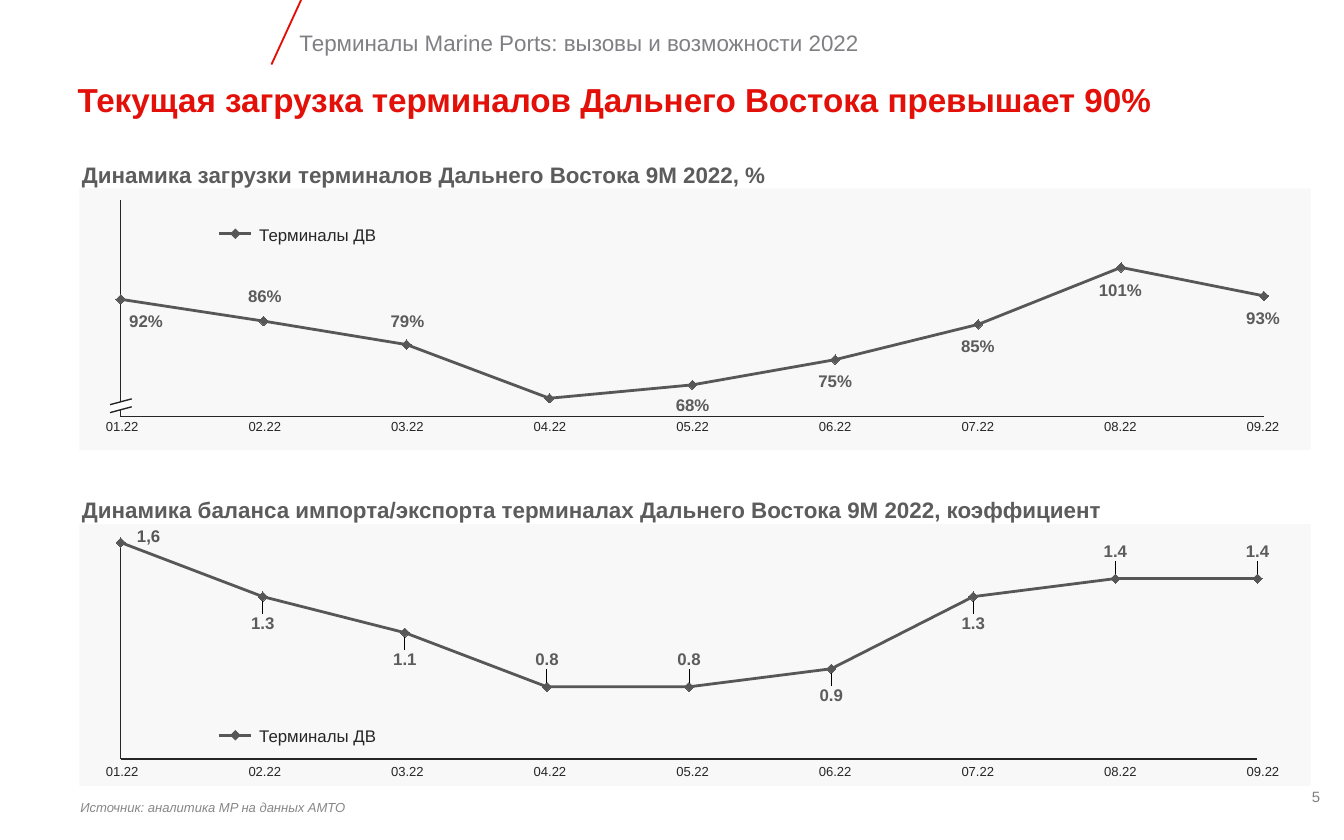
import pptx
import pptx.util
import pptx.chart.data
import pptx.dml.color
import pptx.enum.chart
import pptx.enum.shapes
import pptx.enum.text
import pptx.oxml
import pptx.oxml.ns

Cm = pptx.util.Cm
Pt = pptx.util.Pt
qn = pptx.oxml.ns.qn
Align = pptx.enum.text.PP_ALIGN
Anchor = pptx.enum.text.MSO_ANCHOR
Position = pptx.enum.chart.XL_LABEL_POSITION
COLORS = {"red": "E31009", "header": "807F83", "label": "5C5C5C", "series": "575757",
          "axis": "262626", "source": "878787", "white": "FFFFFF"}
MONTHS = [f"{month:02}.22" for month in range(1, 10)]
FIRST_X, MONTH_STEP = 2.31, 21.56 / 8
LEADER_LINES = (
    '<c:extLst xmlns:c="http://schemas.openxmlformats.org/drawingml/2006/chart">'
    '<c:ext uri="{CE6537A1-D6FC-4f65-9D91-7224C49458BB}" '
    'xmlns:c15="http://schemas.microsoft.com/office/drawing/2012/chart">'
    '<c15:showLeaderLines val="1"/></c:ext></c:extLst>')


class SlideBuilder:
    def __init__(self, slide, font="Arial"):
        self.slide = slide
        self.font = font

    def color(self, name):
        return pptx.dml.color.RGBColor.from_string(COLORS[name])

    def style_line(self, line, color, width):
        line.color.rgb = self.color(color)
        line.width = Pt(width)

    def text(self, box, words, size, color, bold=False, italic=False, align=Align.LEFT,
             anchor=Anchor.TOP, margins=(0.25, 0.13), wrap=True):
        shape = self.slide.shapes.add_textbox(*map(Cm, box))
        frame = shape.text_frame
        frame.word_wrap = wrap
        frame.vertical_anchor = anchor
        frame.margin_left = frame.margin_right = Cm(margins[0])
        frame.margin_top = frame.margin_bottom = Cm(margins[1])
        paragraph = frame.paragraphs[0]
        paragraph.text = words
        paragraph.alignment = align
        font = paragraph.font
        font.name, font.size, font.bold, font.italic = self.font, Pt(size), bold, italic
        font.color.rgb = self.color(color)
        return paragraph

    def label(self, center, top, words, size, color, bold=False):
        width, height = 0.9, 0.38 if bold else 0.3
        self.text((center - width / 2, top, width, height), words, size, color, bold,
                  align=Align.CENTER, margins=(0, 0), wrap=False)

    def line(self, start, end, color, width):
        connector = self.slide.shapes.add_connector(
            pptx.enum.shapes.MSO_CONNECTOR.STRAIGHT, *map(Cm, start + end))
        self.style_line(connector.line, color, width)
        connector._element.spPr.append(pptx.oxml.parse_xml(
            '<a:effectLst xmlns:a="http://schemas.openxmlformats.org/drawingml/2006/main"/>'))

    def fill(self, shape, color):
        shape.shadow.inherit = False
        shape.fill.solid()
        shape.fill.fore_color.rgb = self.color(color)
        shape.line.fill.background()

    def shape(self, kind, box, color, alpha=None):
        shape = self.slide.shapes.add_shape(kind, *map(Cm, box))
        self.fill(shape, color)
        if alpha is not None:
            element = shape._element.spPr.find(".//" + qn("a:srgbClr"))
            element.append(element.makeelement(qn("a:alpha"), {"val": str(alpha * 1000)}))

    def card(self, top):
        self.shape(pptx.enum.shapes.MSO_SHAPE.RECTANGLE, (1.5, top, 23.27, 4.95), "header", 5)

    def legend(self, middle):
        self.line((4.14, middle), (4.75, middle), "series", 1.5)
        self.shape(pptx.enum.shapes.MSO_SHAPE.DIAMOND,
                   (4.35, middle - 0.1, 0.2, 0.2), "series")
        self.text((4.9, middle - 0.17, 2.24, 0.38), "Терминалы ДВ", 9, "axis",
                  anchor=Anchor.MIDDLE, margins=(0, 0), wrap=False)

    def months(self, top):
        for index, month in enumerate(MONTHS):
            self.label(FIRST_X + index * MONTH_STEP, top, month, 7, "axis")

    def axis_break(self, left, top):
        width, rise, gap = 0.41, 0.11, 0.15
        corners = [(left, top + rise), (left + width, top),
                   (left + width, top + gap), (left, top + rise + gap)]
        points = [(Cm(x), Cm(y)) for x, y in corners]
        builder = self.slide.shapes.build_freeform(*points[0])
        builder.add_line_segments(points[1:], close=True)
        self.fill(builder.convert_to_shape(), "white")
        self.line(corners[0], corners[1], "axis", 0.75)
        self.line(corners[3], corners[2], "axis", 0.75)

    def chart(self, box, plot_width, values, limits, number_format):
        data = pptx.chart.data.CategoryChartData(number_format=number_format)
        data.categories = MONTHS
        data.add_series("Терминалы ДВ", values)
        chart = self.slide.shapes.add_chart(
            pptx.enum.chart.XL_CHART_TYPE.LINE_MARKERS, *map(Cm, box), data).chart
        chart.has_legend = chart.has_title = False
        chart.font.name, chart.font.size = "Calibri", Pt(10)
        chart.font.color.rgb = self.color("axis")
        for axis in (chart.category_axis, chart.value_axis):
            axis.has_major_gridlines = False
            axis.major_tick_mark = axis.minor_tick_mark = pptx.enum.chart.XL_TICK_MARK.NONE
            axis.tick_label_position = pptx.enum.chart.XL_TICK_LABEL_POSITION.NONE
            axis.crosses = pptx.enum.chart.XL_AXIS_CROSSES.MINIMUM
            self.style_line(axis.format.line, "axis", 0.75)
        chart.value_axis.minimum_scale, chart.value_axis.maximum_scale = limits
        crosses = chart.value_axis._element.find(qn("c:crosses"))
        crosses.addnext(crosses.makeelement(qn("c:crossBetween"), {"val": "midCat"}))
        area = chart._chartSpace.chart.plotArea
        for layout in area.findall(qn("c:layout")):
            area.remove(layout)
        area.insert(0, self.layout(layoutTarget="inner", xMode="edge", yMode="edge",
                                   x=0.01, y=0.05, w=plot_width, h=0.9))
        plot = chart.plots[0]
        plot.vary_by_categories = False
        series = plot.series[0]
        series.smooth = False
        self.style_line(series.format.line, "series", 1.5)
        marker = series.marker
        marker.style, marker.size = pptx.enum.chart.XL_MARKER_STYLE.DIAMOND, 5
        marker.format.fill.solid()
        marker.format.fill.fore_color.rgb = self.color("series")
        self.style_line(marker.format.line, "series", 0.75)
        return series

    def layout(self, **settings):
        children = "".join(f'<c:{key} val="{value}"/>' for key, value in settings.items())
        return pptx.oxml.parse_xml(
            '<c:layout xmlns:c="http://schemas.openxmlformats.org/drawingml/2006/chart">'
            f"<c:manualLayout>{children}</c:manualLayout></c:layout>")

    def point_labels(self, series, above):
        series.data_labels.show_value = False
        for index in range(1, len(MONTHS)):
            label = series.points[index].data_label
            font = label.font
            font.name, font.size, font.bold = self.font, Pt(9), True
            font.color.rgb = self.color("label")
            label.position = Position.ABOVE if index in above else Position.BELOW
            element = label._get_or_add_dLbl()
            element.insert(1, self.layout(x=0, y=-0.03 if index in above else 0.03))
        series.data_labels._element.append(pptx.oxml.parse_xml(LEADER_LINES))


def main():
    presentation = pptx.Presentation()
    presentation.slide_width, presentation.slide_height = Cm(25.4), Cm(15.88)
    builder = SlideBuilder(presentation.slides.add_slide(presentation.slide_layouts[6]))

    builder.line((5.69, 0), (5.13, 1.22), "red", 1)
    builder.text((5.41, 0.43, 15.19, 0.76),
                 "Терминалы Marine Ports: вызовы и возможности 2022", 12, "header")
    builder.text((24.21, 14.76, 0.99, 0.61), "5", 8, "header", align=Align.RIGHT)
    title = builder.text((1.22, 1.45, 24.18, 0.94),
                         "Текущая загрузка терминалов Дальнего Востока превышает 90%",
                         17.8, "red", bold=True)
    title.line_spacing = 0.9

    builder.card(3.56)
    builder.text((1.3, 2.92, 15.19, 0.76),
                 "Динамика загрузки терминалов Дальнего Востока 9М 2022, %", 12, "label", bold=True)
    builder.chart((2.06, 3.56, 22.05, 4.55), 0.98,
                  [81, 68, 54, 22, 30, 45, 66, 100, 83], (11, 140), "0")
    builder.axis_break(2.08, 7.54)
    builder.months(7.92)
    for month, shift, top, words in [
            (0, 0.45, 5.87, "92%"), (1, 0, 5.41, "86%"), (2, 0, 5.87, "79%"),
            (4, 0, 7.47, "68%"), (5, 0, 7.01, "75%"), (6, 0, 6.35, "85%"),
            (7, 0, 5.28, "101%"), (8, 0, 5.82, "93%")]:
        builder.label(FIRST_X + month * MONTH_STEP + shift, top, words, 9, "label", bold=True)
    builder.legend(4.42)

    builder.card(9.91)
    builder.text((1.3, 9.25, 21.21, 0.76),
                 "Динамика баланса импорта/экспорта терминалах Дальнего Востока 9М 2022, коэффициент",
                 12, "label", bold=True)
    balance = builder.chart((2.06, 10.03, 22.15, 4.55), 0.97,
                            [1.6, 1.3, 1.1, 0.8, 0.8, 0.9, 1.3, 1.4, 1.4], (0.4, 1.6), "0.0")
    builder.point_labels(balance, above={3, 4, 7, 8})
    builder.label(2.81, 9.93, "1,6", 9, "series", bold=True)
    builder.months(14.43)
    builder.legend(13.9)
    builder.text((1.27, 14.99, 14.53, 0.56), "Источник: аналитика MP на данных АМТО", 7,
                 "source", italic=True)
    presentation.save("out.pptx")


if __name__ == "__main__":
    main()
